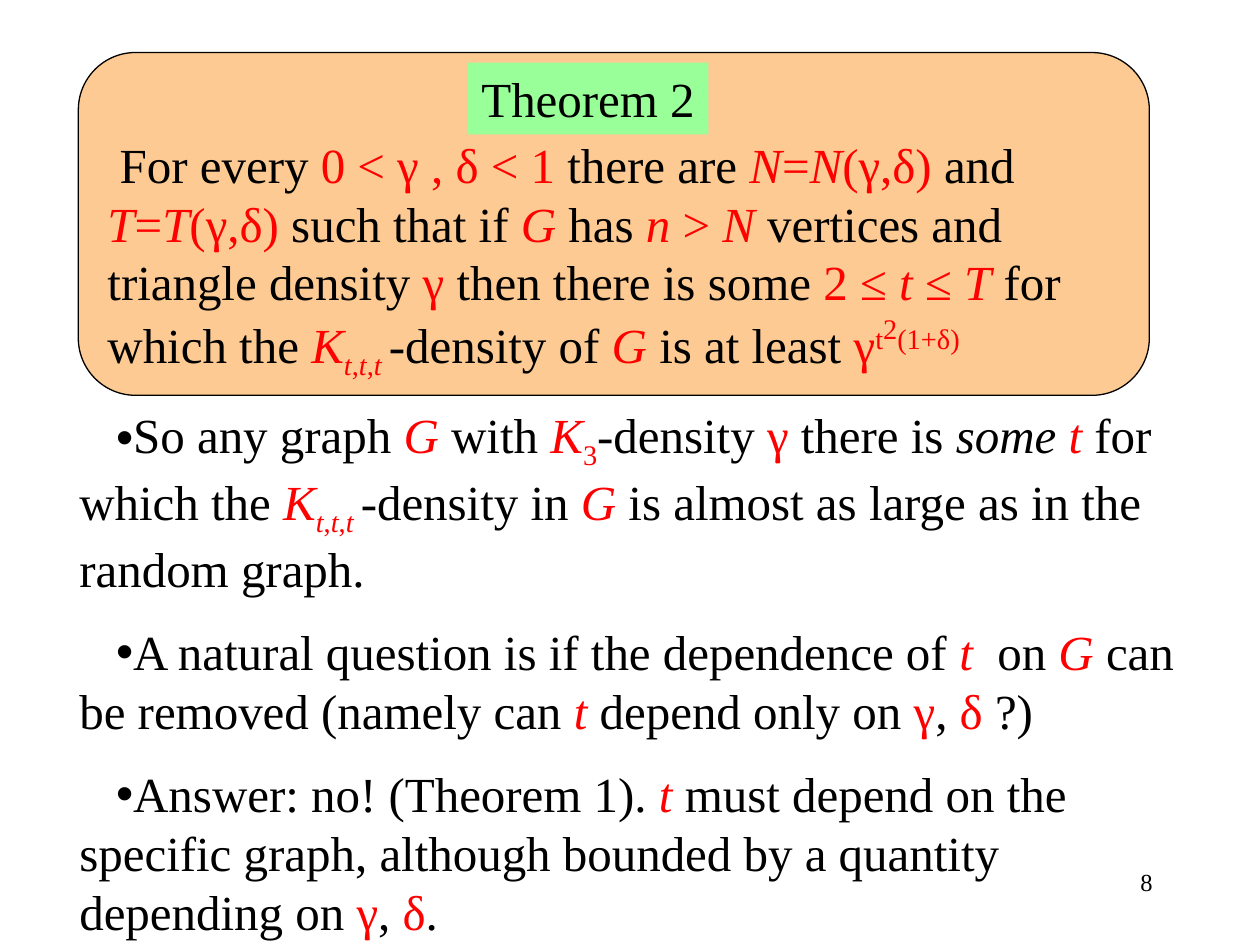
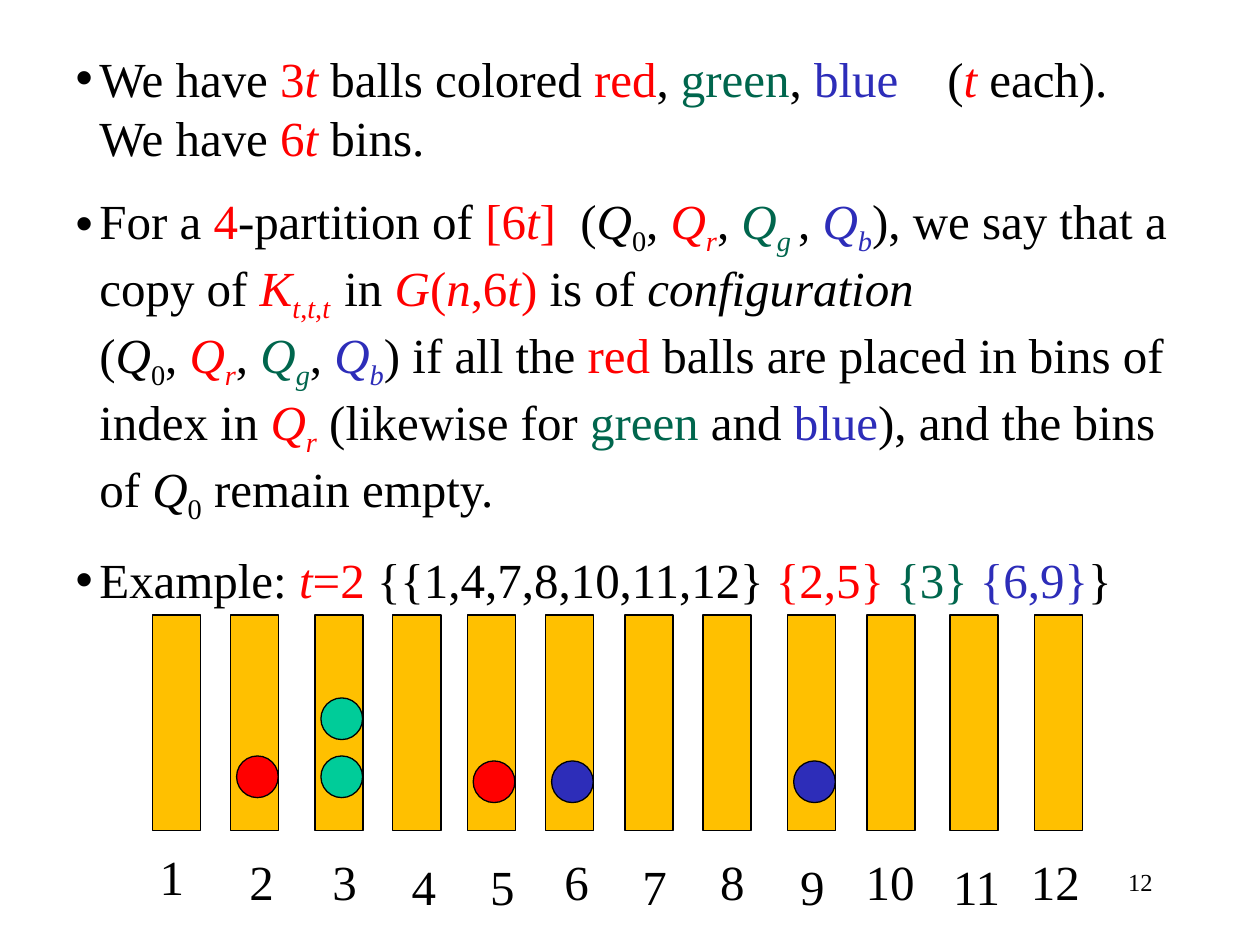
from dataclasses import dataclass

from lxml import etree
from pptx import Presentation
from pptx import util as u
from pptx.dml import color
from pptx.enum import shapes, text
from pptx.oxml import ns


@dataclass(frozen=True)
class Theme:
    font: str = "Times New Roman"
    body_size: int = 28
    number_size: int = 14
    space_before: int = 14
    line_width: float = 0.75
    black: str = "000000"
    red: str = "FF0000"
    green: str = "00664D"
    blue: str = "2D2DB9"
    panel: str = "FCCA92"
    label: str = "99FF99"
    bin: str = "FFC000"
    green_ball: str = "00CC99"


THEME = Theme()
RUN_COLOURS = {"r": THEME.red, "g": THEME.green, "b": THEME.blue}
BASELINES = {"_": -25000, "^": 30000, "*": 50000}

K_TTT = "ri~K|ri_~t|r_~,|ri_~t|r_~,|ri_~t "
Q_EMPTY, Q_RED, Q_GREEN, Q_BLUE = "i~Q|_~0", "ri~Q|ri_~r", "gi~Q|gi_~g", "bi~Q|bi_~b"

THEOREM = (
    "\n For every |r~0 < γ , δ < 1| there are |ri~N|r~=|ri~N|r~(γ,δ) |and "
    "|ri~T|r~=|ri~T|r~(γ,δ) |such that if |ri~G| has |ri~n|r~ > |ri~N |"
    "vertices and triangle density |r~γ |then there is some |r~2 ≤ |ri~t |r~≤ |ri~T|"
    f" for which the |{K_TTT}|-density of |ri~G| is at least |r~γ|r^~t|r*~2|r^~(1+δ)"
)
CONSEQUENCES = [
    "So any graph |ri~G| with |ri~K|r_~3|-density |r~γ| there is |i~some |ri~t|"
    f" for which the |{K_TTT}|-density in |ri~G| is almost as large as in the random graph.",
    "A natural question is if the dependence of |ri~t|  on |ri~G| can be removed "
    "(namely can |ri~t| depend only on |r~γ|, |r~δ |?)",
    "Answer: no! (Theorem 1). |ri~t| must depend on the specific graph, although "
    "bounded by a quantity depending on |r~γ|, |r~δ|.",
]
CONFIGURATION = [
    "We have |r~3|ri~t| balls colored |r~red|, |g~green|, |b~blue    |(|ri~t"
    "| each).\nWe have |r~6|ri~t| bins.",
    f"For a |r~4|-partition of |r~[6|ri~t|r~]  |(|{Q_EMPTY}|, |{Q_RED}|, |{Q_GREEN} |, |{Q_BLUE}"
    f"|), we say that a copy of |{K_TTT} |in |ri~G|r~(|ri~n|r~,6|ri~t|r~)| is of "
    f"|i~configuration\n|(|{Q_EMPTY}|, |{Q_RED}|, |{Q_GREEN}|, |{Q_BLUE}|) if all the |r~red"
    f"| balls are placed in bins of index in |{Q_RED}| (likewise for |g~green| and |b~blue"
    f"|), and the bins of |{Q_EMPTY}| remain empty.",
    "Example: |ri~t|r~=2 |{{1,4,7,8,10,11,12} |r~{2,5} |g~{3} |b~{6,9}|}",
]

BIN_LEFTS = [0, 1.58, 3.28, 4.85, 6.35, 7.93, 9.53, 11.1, 12.81, 14.41, 16.08, 17.78]
NUMBER_LEFTS = [-0.1, 1.71, 3.38, 4.98, 6.56, 8.06, 9.63, 11.2, 12.81, 13.87, 15.35, 17.15]
NUMBER_TOPS = [4.54, 4.64, 4.64, 4.75, 4.75, 4.64, 4.75, 4.64, 4.75, 4.64, 4.75, 4.64]
NUMBER_WIDTHS = [0.74] * 9 + [2.01, 2.54, 2.11]
BALLS = [
    (2, 2.84, THEME.red),
    (5, 2.94, THEME.red),
    (3, 2.84, THEME.green_ball),
    (6, 2.94, THEME.blue),
    (9, 2.94, THEME.blue),
    (3, 1.67, THEME.green_ball),
]


def apply(target, values):
    for name, value in values.items():
        setattr(target, name, value)


def cm(box):
    return [u.Cm(length) for length in box]


def place(shape, box):
    apply(shape, dict(zip(("left", "top", "width", "height"), cm(box))))


def rgb(value):
    return color.RGBColor.from_string(value)


def set_fill(shape, fill):
    shape.fill.solid()
    shape.fill.fore_color.rgb = rgb(fill)


def add_figure(parent, kind, box, fill):
    shape = parent.shapes.add_shape(kind, *cm(box))
    shape.shadow.inherit = False
    set_fill(shape, fill)
    shape.line.color.rgb = rgb(THEME.black)
    shape.line.width = u.Pt(THEME.line_width)
    return shape


def add_run(paragraph, style, words, size):
    run = paragraph.add_run()
    run.text = words
    apply(run.font, {"name": THEME.font, "size": u.Pt(size), "italic": "i" in style})
    run.font.color.rgb = rgb(next((RUN_COLOURS[c] for c in style if c in RUN_COLOURS), THEME.black))
    for mark in set(style) & set(BASELINES):
        run.font._element.set("baseline", str(BASELINES[mark]))


def add_break(paragraph, size):
    paragraph.add_line_break()
    line_break = paragraph._p.findall(ns.qn("a:br"))[-1]
    properties = etree.SubElement(line_break, ns.qn("a:rPr"), sz=str(size * 100))
    etree.SubElement(properties, ns.qn("a:latin"), typeface=THEME.font)


def write(shape, markups, align=text.PP_ALIGN.LEFT, size=THEME.body_size, indent=None, **frame_format):
    frame = shape.text_frame
    apply(frame, {
        "word_wrap": True,
        "auto_size": text.MSO_AUTO_SIZE.NONE,
        "vertical_anchor": text.MSO_ANCHOR.TOP,
        **frame_format,
    })
    for index, markup in enumerate(markups):
        paragraph = frame.add_paragraph() if index else frame.paragraphs[0]
        apply(paragraph, {"alignment": align, "space_before": u.Pt(THEME.space_before)})
        if indent:
            properties = paragraph._p.get_or_add_pPr()
            for name, length in zip(("marL", "indent"), indent):
                properties.set(name, str(u.Cm(length)))
        for segment in markup.split("|"):
            style, _, words = segment.rpartition("~")
            for line_index, line in enumerate(words.split("\n")):
                if line_index:
                    add_break(paragraph, size)
                if line:
                    add_run(paragraph, style, line, size)


def add_label(parent, box, words, **options):
    write(parent.shapes.add_textbox(*cm(box)), [words], **options)


def add_slide(presentation, number):
    slide = presentation.slides.add_slide(presentation.slide_layouts[1])
    add_label(slide, (18.21, 17.35, 5.28, 1.27), str(number),
              align=text.PP_ALIGN.RIGHT, size=THEME.number_size)
    return slide


def add_bullets(slide, box, markups, indent, **frame_format):
    body = slide.placeholders[1]
    place(body, box)
    write(body, markups, indent=indent, **frame_format)


def add_theorem(slide, box):
    left, top, width, height = box
    panel = add_figure(slide, shapes.MSO_SHAPE.ROUNDED_RECTANGLE, box, THEME.panel)
    panel.adjustments[0] = 0.167
    write(panel, [THEOREM])
    slide.shapes._spTree.insert(2, panel._element)
    title = slide.shapes.title
    place(title, (left + 7.85, top + 0.2, 4.85, 1.45))
    set_fill(title, THEME.label)
    write(title, ["Theorem 2"], align=text.PP_ALIGN.CENTER, word_wrap=False)


def add_bins(slide, box):
    left, top, width, height = box
    group = slide.shapes.add_group_shape()
    for bin_left in BIN_LEFTS:
        add_figure(group, shapes.MSO_SHAPE.RECTANGLE,
                   (left + bin_left, top, 0.97, height), THEME.bin)
    numbers = zip(NUMBER_LEFTS, NUMBER_TOPS, NUMBER_WIDTHS)
    for number, (number_left, number_top, number_width) in enumerate(numbers, 1):
        add_label(group, (left + number_left, top + number_top, number_width, 1.45),
                  str(number), align=text.PP_ALIGN.CENTER)
    for bin_number, drop, fill in BALLS:
        ball_left = left + BIN_LEFTS[bin_number - 1] + 0.12
        add_figure(group, shapes.MSO_SHAPE.OVAL, (ball_left, top + drop, 0.84, 0.84), fill)


def theorem_slide(presentation):
    slide = add_slide(presentation, 8)
    add_theorem(slide, (1.58, 1.06, 21.59, 6.91))
    add_bullets(slide, (0.74, 8.03, 23.6, 9.75), CONSEQUENCES, (0, 0.74), margin_left=u.Cm(0.86))


def bins_slide(presentation):
    slide = add_slide(presentation, 12)
    title = slide.shapes.title._element
    title.getparent().remove(title)
    add_bullets(slide, (1.27, 0.85, 22.96, 11.02), CONFIGURATION, (0.48, -0.48))
    add_bins(slide, (3.07, 12.4, 18.75, 4.34))


def main():
    presentation = Presentation()
    apply(presentation, {"slide_width": u.Cm(25.4), "slide_height": u.Cm(19.05)})
    theorem_slide(presentation)
    bins_slide(presentation)
    presentation.save("out.pptx")


if __name__ == "__main__":
    main()
